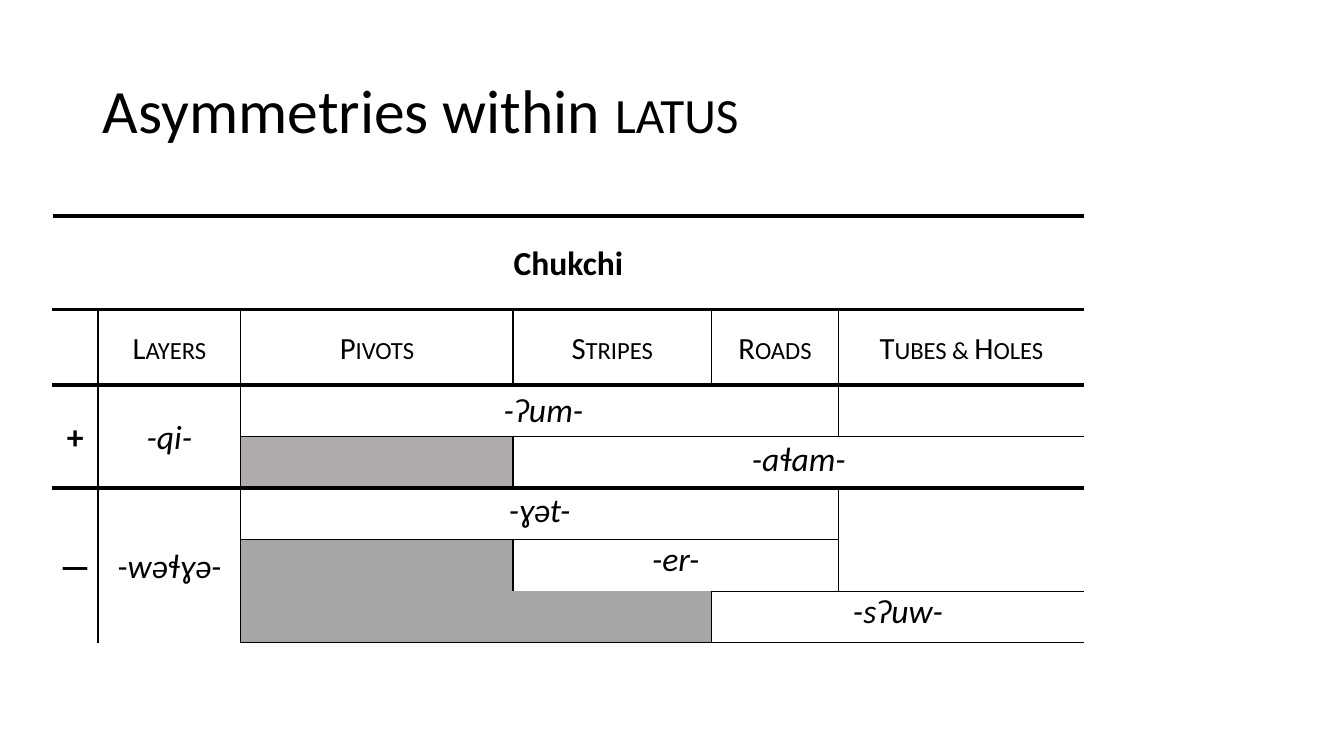
from lxml import etree
from pptx import Presentation
from pptx import util as u
from pptx.dml.color import RGBColor
from pptx.enum import text
from pptx.oxml import ns

BLACK = RGBColor(0x00, 0x00, 0x00)
WHITE = RGBColor(0xFF, 0xFF, 0xFF)
WARM_GREY = RGBColor(0xAF, 0xAB, 0xAB)
GREY = RGBColor(0xA6, 0xA6, 0xA6)

BOLD = {"size": u.Pt(24), "bold": True}
SUFFIX = {"size": u.Pt(24), "italic": True}
HEADER = {"size": u.Pt(22)}
SPACED = {"line_spacing": 1.07, "space_before": u.Pt(3)}
MIDDLE = text.MSO_ANCHOR.MIDDLE
TOP = text.MSO_ANCHOR.TOP

COLUMN_WIDTHS = [1.15, 3.6, 6.86, 5, 3.2, 2, 4.2]
ROW_HEIGHTS = [2.36, 1.9] + [1.3] * 5

# Borders read left, top, right, bottom: W is white, digits are black points.
HEADINGS = [("Layers", 1, 1), ("Pivots", 2, 1), ("Stripes", 3, 1),
            ("Roads", 4, 1), ("Tubes & Holes", 5, 2)]
LABELS = [
    (0, 0, 1, 7, "Chukchi", "W3W3", BOLD, SPACED, MIDDLE),
    *[(1, column, 1, span, heading, "1313", HEADER, SPACED, MIDDLE)
      for heading, column, span in HEADINGS],
    (2, 0, 2, 1, "+", "W313", BOLD, SPACED, MIDDLE),
    (2, 1, 2, 1, "-qi-", "1313", SUFFIX, SPACED, MIDDLE),
    (2, 2, 1, 3, " -ʔum-", "1311", SUFFIX, {}, MIDDLE),
    (3, 3, 1, 4, "-aɬam-", "1113", SUFFIX, SPACED, TOP),
    (4, 0, 3, 1, "—", "W311", BOLD, SPACED, MIDDLE),
    (4, 1, 3, 1, "-wəɬɣə-", "1311", SUFFIX, SPACED, MIDDLE),
    (4, 2, 1, 3, "-ɣət-", "1311", SUFFIX, SPACED, TOP),
    (5, 3, 1, 2, "-er-", "1111", SUFFIX, {}, TOP),
    (6, 4, 1, 3, "-sʔuw-", "1111", SUFFIX, {}, TOP),
]
GAPS = [
    (1, 0, 1, 1, "W313", None),
    (2, 5, 1, 1, "1301", None),
    (2, 6, 1, 1, "0301", None),
    (3, 2, 1, 1, "1113", WARM_GREY),
    (4, 5, 1, 2, "1300", None),
    (5, 2, 1, 1, "1110", GREY),
    (5, 5, 1, 2, "1001", None),
    (6, 2, 1, 2, "1011", GREY),
]


def apply(target, values):
    for name, value in values.items():
        setattr(target, name, value)


class SlideBuilder:
    def __init__(self, slide, font="Calibri"):
        self.slide = slide
        self.font = font

    def run(self, paragraph, words, style, small_caps=False):
        run = paragraph.add_run()
        run.text = words
        apply(run.font, {"name": self.font, "bold": False, "italic": False, **style})
        run.font.color.rgb = BLACK
        if small_caps:
            run._r.get_or_add_rPr().set("cap", "small")

    def title(self, plain, capitals):
        heading = self.slide.shapes.title
        apply(heading, {"left": u.Cm(2.34), "top": u.Cm(1.02),
                        "width": u.Cm(29.2), "height": u.Cm(3.68)})
        apply(heading.text_frame, {"auto_size": text.MSO_AUTO_SIZE.NONE,
                                   "vertical_anchor": MIDDLE, "word_wrap": True})
        line = heading.text_frame.paragraphs[0]
        apply(line, {"alignment": text.PP_ALIGN.LEFT, "line_spacing": 0.9})
        self.run(line, plain, {"size": u.Pt(44)})
        self.run(line, capitals, {"size": u.Pt(44)}, small_caps=True)

    def table(self, left, top, widths, heights):
        frame = self.slide.shapes.add_table(
            len(heights), len(widths), u.Cm(left), u.Cm(top),
            u.Cm(sum(widths)), u.Cm(sum(heights)))
        self.grid = frame.table
        apply(self.grid, {"first_row": False, "horz_banding": False})
        for column, width in zip(self.grid.columns, widths):
            column.width = u.Cm(width)
        for row, height in zip(self.grid.rows, heights):
            row.height = u.Cm(height)

    def border(self, cell, side, code):
        line = etree.SubElement(cell._tc.get_or_add_tcPr(), ns.qn(f"a:ln{side}"))
        if code == "0":
            etree.SubElement(line, ns.qn("a:noFill"))
            return
        line.set("w", str(u.Pt(1 if code == "W" else int(code))))
        fill = etree.SubElement(line, ns.qn("a:solidFill"))
        color = etree.SubElement(fill, ns.qn("a:srgbClr"))
        color.set("val", str(WHITE if code == "W" else BLACK))

    def area(self, row, column, rows, columns, borders, fill=None):
        left, top, right, bottom = borders
        for r in range(rows):
            for c in range(columns):
                cell = self.grid.cell(row + r, column + c)
                self.border(cell, "L", left if c == 0 else "0")
                self.border(cell, "R", right if c == columns - 1 else "0")
                self.border(cell, "T", top if r == 0 else "0")
                self.border(cell, "B", bottom if r == rows - 1 else "0")
                if fill is None:
                    cell.fill.background()
                else:
                    cell.fill.solid()
                    cell.fill.fore_color.rgb = fill
        corner = self.grid.cell(row, column)
        if rows * columns > 1:
            corner.merge(self.grid.cell(row + rows - 1, column + columns - 1))
        return corner

    def label(self, row, column, rows, columns, words, borders, style, spacing, anchor):
        cell = self.area(row, column, rows, columns, borders)
        apply(cell, {"margin_left": u.Cm(0.18), "margin_right": u.Cm(0.18),
                     "margin_top": 0, "margin_bottom": 0, "vertical_anchor": anchor})
        line = cell.text_frame.paragraphs[0]
        apply(line, {"alignment": text.PP_ALIGN.CENTER, **spacing})
        self.run(line, words, style, small_caps=style is HEADER)


def main():
    deck = Presentation()
    apply(deck, {"slide_width": u.Cm(33.87), "slide_height": u.Cm(19.05)})
    builder = SlideBuilder(deck.slides.add_slide(deck.slide_layouts[5]))
    builder.title("Asymmetries within ", "latus")
    builder.table(1.32, 5.44, COLUMN_WIDTHS, ROW_HEIGHTS)
    for label in LABELS:
        builder.label(*label)
    for gap in GAPS:
        builder.area(*gap)
    deck.save("out.pptx")


if __name__ == "__main__":
    main()
